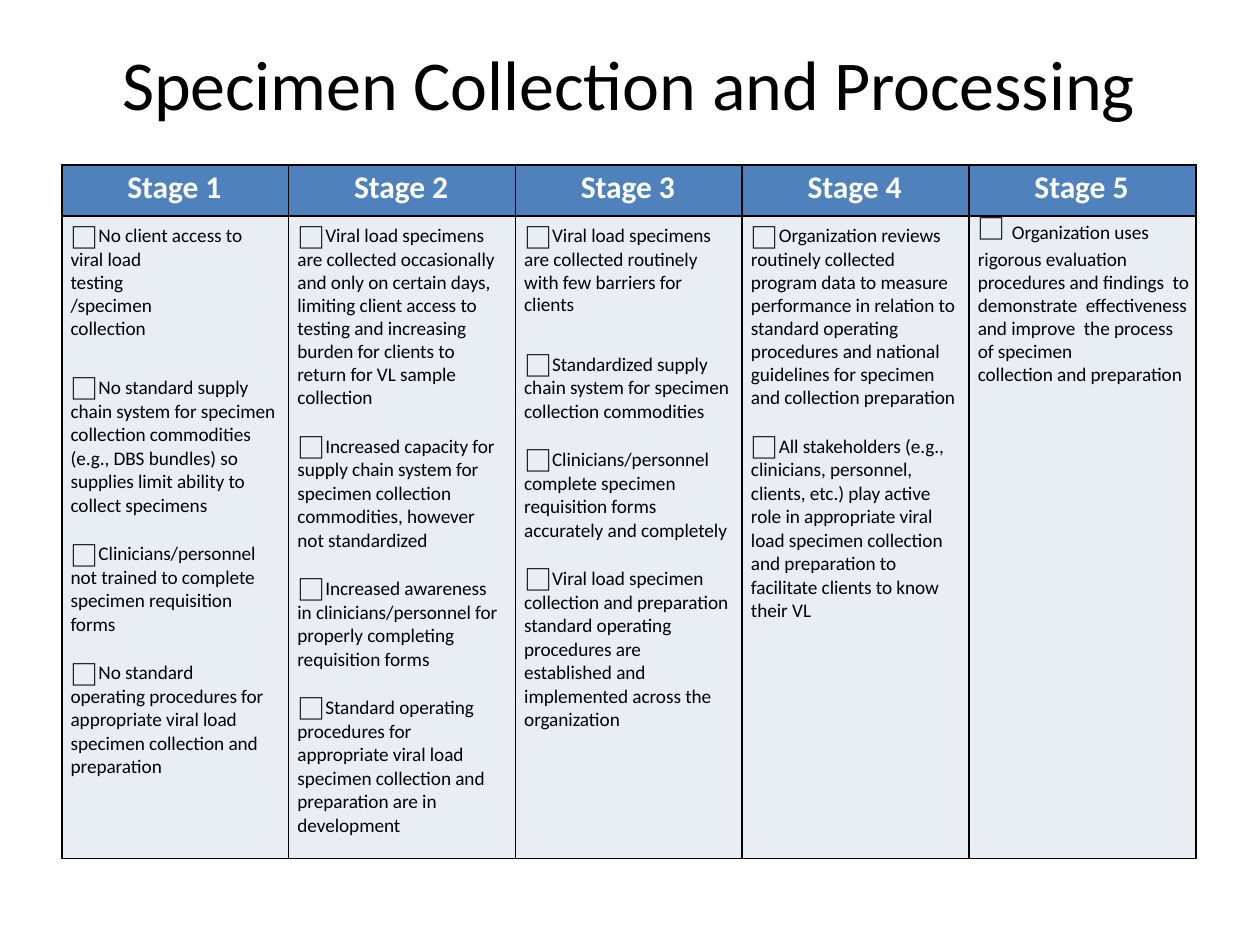
from dataclasses import dataclass

from lxml.etree import SubElement
from pptx import Presentation
from pptx.dml.color import RGBColor
from pptx.enum.text import MSO_ANCHOR
from pptx.oxml.ns import qn
from pptx.util import Emu, Inches, Length, Pt

COLORS = {"ink": "000000", "white": "FFFFFF", "header": "4F81BD", "body": "E9EDF4"}
FONT, SYMBOL_FONT = "Calibri", "Noto Sans CJK JP"
SLIDE_W, SLIDE_H = Inches(10), Inches(7.5)
COLUMN_SHARE = 0.18  # of the slide's width
ROW_SHARES = (0.054, 0.68)  # of the slide's height


@dataclass(frozen=True)
class Style:
    """Paragraph format; lengths in points, a float below 2 is a line multiple."""
    line: Length | float
    before: float = 0
    bullet: bool = False


LEAD = Style(Pt(18.2), bullet=True)
PLAIN_LEAD = Style(Pt(18.2))
BODY = Style(Pt(13.2), before=0.2)
TAIL = Style(Pt(12.9))
ITEM = Style(0.99, before=14.3, bullet=True)
WIDE_ITEM = Style(0.99, before=20.3, bullet=True)


@dataclass(frozen=True)
class Para:
    style: Style
    text: str
    right: float = 0.05  # right margin in inches
    symbol: str = ""


STAGES: list[list[Para]] = [
    [
        Para(LEAD, "No client access to"),
        Para(BODY, "viral load  testing /specimen collection", right=0.85),
        Para(WIDE_ITEM, "No standard supply  chain system for specimen  collection commodities  "
                        "(e.g., DBS bundles) so  supplies limit ability to  collect specimens"),
        Para(ITEM, "Clinicians/personnel  not trained to complete  specimen requisition  forms"),
        Para(ITEM, "No standard  operating procedures for  appropriate viral load  "
                   "specimen collection and  preparation", right=0.15),
    ],
    [
        Para(LEAD, "Viral load specimens"),
        Para(BODY, "are collected occasionally  and only on certain days,  limiting client "
                   "access to  testing and increasing  burden for clients to  return for VL sample"),
        Para(TAIL, "collection"),
        Para(ITEM, "Increased capacity for  supply chain system for  specimen collection  "
                   "commodities, however  not standardized"),
        Para(ITEM, "Increased awareness  in clinicians/personnel for  properly completing  "
                   "requisition forms"),
        Para(ITEM, "Standard operating  procedures for  appropriate viral load  specimen "
                   "collection and  preparation are in  development", right=0.15),
    ],
    [
        Para(LEAD, "Viral load specimens"),
        Para(BODY, "are collected routinely  with few barriers for"),
        Para(TAIL, "clients"),
        Para(WIDE_ITEM, "Standardized supply  chain system for specimen  collection commodities"),
        Para(ITEM, "Clinicians/personnel  complete specimen  requisition forms  "
                   "accurately and completely"),
        Para(ITEM, "Viral load specimen  collection and preparation  standard operating  "
                   "procedures are  established and  implemented across the  organization"),
    ],
    [
        Para(LEAD, "Organization reviews"),
        Para(BODY, "routinely collected  program data to measure  performance in relation to  "
                   "standard operating  procedures and national  guidelines for specimen"),
        Para(TAIL, "and collection preparation"),
        Para(ITEM, "All stakeholders (e.g.,  clinicians, personnel,  clients, etc.) play active  "
                   "role in appropriate viral  load specimen collection  and preparation to  "
                   "facilitate clients to know  their VL", right=0.12),
    ],
    [
        Para(PLAIN_LEAD, "Organization uses", symbol="□ "),
        Para(BODY, "rigorous evaluation  procedures and findings  to demonstrate  "
                   "effectiveness and improve  the process of specimen"),
        Para(TAIL, "collection and preparation"),
    ],
]


def rgb(name: str) -> RGBColor:
    return RGBColor.from_string(COLORS[name])


def add_run(p, text: str, size: float, color: str = "ink", bold: bool = False,
            font: str = FONT) -> None:
    r = p.add_run()
    r.text = text
    r.font.name, r.font.size, r.font.bold = font, Pt(size), bold
    r.font.color.rgb = rgb(color)
    r._r.get_or_add_rPr().set("spc", "-5")
    if font == SYMBOL_FONT:
        SubElement(r._r.rPr, qn("a:ea"), typeface=font)


def set_indent(p, left: float, right: float = 0) -> None:
    pPr = p._p.get_or_add_pPr()
    pPr.set("marL", str(Inches(left)))
    pPr.set("marR", str(Inches(right)))
    pPr.set("indent", "0")


def add_box_bullet(p) -> None:
    pPr = p._p.get_or_add_pPr()
    SubElement(pPr, qn("a:buSzPct"), val="145000")
    SubElement(pPr, qn("a:buFont"), typeface=SYMBOL_FONT)
    SubElement(pPr, qn("a:buChar"), char="□")


def style_cell(cell, fill: str, top: float = 0) -> None:
    cell.margin_left = cell.margin_right = cell.margin_bottom = 0
    cell.margin_top = Inches(top)
    tcPr = cell._tc.get_or_add_tcPr()
    for side in ("lnL", "lnR", "lnT", "lnB"):
        ln = SubElement(tcPr, qn(f"a:{side}"), w=str(Pt(1)))
        SubElement(SubElement(ln, qn("a:solidFill")), qn("a:srgbClr"), val=COLORS["ink"])
    cell.fill.solid()
    cell.fill.fore_color.rgb = rgb(fill)


def fill_header(cell, number: int) -> None:
    style_cell(cell, "header", top=0.03)
    p = cell.text_frame.paragraphs[0]
    p.space_before = Pt(1.9)
    set_indent(p, 0.52)
    add_run(p, f"Stage {number}", 18, "white", bold=True)


def fill_stage(cell, paras: list[Para]) -> None:
    style_cell(cell, "body")
    tf = cell.text_frame
    for i, para in enumerate(paras):
        p = tf.add_paragraph() if i else tf.paragraphs[0]
        p.line_spacing = para.style.line
        p.space_before = Pt(para.style.before)
        set_indent(p, 0.07, para.right)
        if para.style.bullet:
            add_box_bullet(p)
        if para.symbol:
            add_run(p, para.symbol, 16, font=SYMBOL_FONT)
        add_run(p, para.text, 11)


def add_title(s, text: str) -> None:
    sp = s.shapes.add_textbox(Inches(0.96), Inches(0.3), Inches(8.09), Inches(0.71))
    tf = sp.text_frame
    tf.margin_left = tf.margin_right = tf.margin_top = tf.margin_bottom = 0
    tf.vertical_anchor = MSO_ANCHOR.MIDDLE
    tf.word_wrap = True
    set_indent(tf.paragraphs[0], 0.01)
    add_run(tf.paragraphs[0], text, 40)


def add_stage_table(s) -> None:
    width = Emu(int(SLIDE_W * COLUMN_SHARE * len(STAGES)))
    height = Emu(int(SLIDE_H * sum(ROW_SHARES)))
    table = s.shapes.add_table(2, len(STAGES), Inches(0.49), Inches(1.31), width, height).table
    for row, share in zip(table.rows, ROW_SHARES):
        row.height = Emu(int(SLIDE_H * share))
    for col, paras in enumerate(STAGES):
        table.columns[col].width = Emu(int(SLIDE_W * COLUMN_SHARE))
        fill_header(table.cell(0, col), col + 1)
        fill_stage(table.cell(1, col), paras)


def main() -> None:
    prs = Presentation()
    prs.slide_width, prs.slide_height = SLIDE_W, SLIDE_H
    s = prs.slides.add_slide(prs.slide_layouts[6])
    add_title(s, "Specimen Collection and Processing")
    add_stage_table(s)
    prs.save("out.pptx")


if __name__ == "__main__":
    main()
